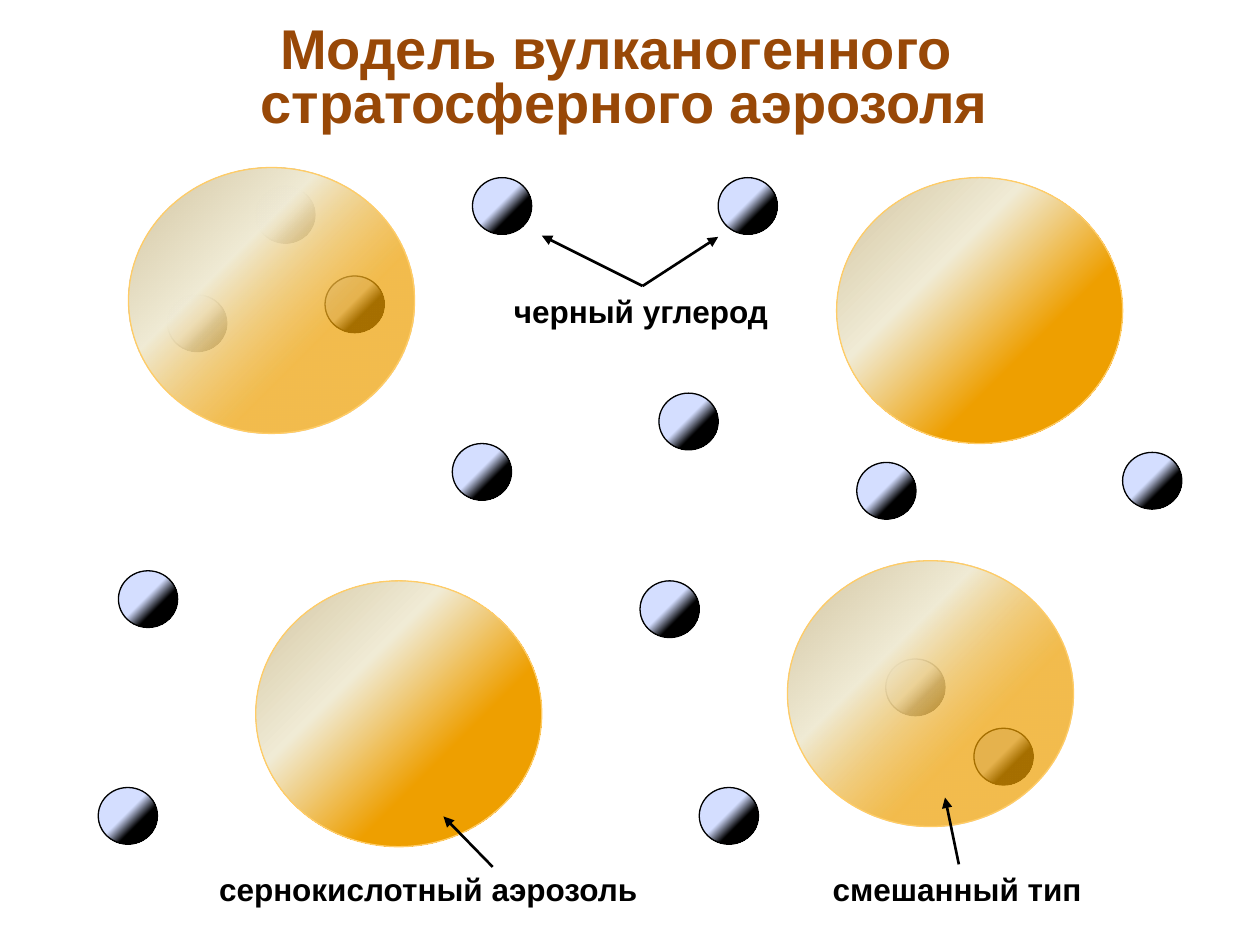
import pptx
import pptx.dml.color
import pptx.enum.shapes
import pptx.enum.text
import pptx.oxml
import pptx.oxml.ns
import pptx.util
from pptx.util import Inches

THEME = {
    "font": "Arial",
    "title_size": 32,
    "label_size": 18,
    "title": "984807",
    "ink": "000000",
    "droplet_line": "FFCC66",
    "thin": 0.75,
    "arrow": 1.5,
    # (position %, colour, opacity %), starting from the lower right corner
    "carbon": [(34, "000000", 100), (53, "D4DEFF", 100), (83, "D4DEFF", 100), (100, "96AB94", 100)],
    "acid": [(34, "EE9F00", 100), (65, "F0EBD5", 100), (100, "D1C39F", 100)],
    "mixed": [(34, "EE9F00", 70), (65, "F0EBD5", 100), (100, "D1C39F", 100)],
}

CARBON_SIZE = (0.47, 0.45)
DROPLET_SIZE = (2.27, 2.11)

# Mixed droplets cover the carbon particles they hold
MIXED_DROPLETS = [
    ((6.25, 4.45), [(7.73, 5.78), (7.03, 5.23)]),
    ((1.02, 1.33), [(2.58, 2.19), (1.33, 2.34), (2.03, 1.48)]),
]
ACID_DROPLETS = [(6.64, 1.41), (2.03, 4.61)]
FREE_CARBON = [
    (8.91, 3.59), (0.78, 6.25), (5.23, 3.12), (3.75, 1.41), (5.7, 1.41), (3.59, 3.52),
    (5.08, 4.61), (6.8, 3.67), (5.55, 6.25), (0.94, 4.53),
]

TITLE = ["Модель вулканогенного ", "стратосферного аэрозоля"]
TITLE_BOX = (1.95, 0.16, 6.01, 0.96)
LABELS = [
    ("черный углерод", (3.98, 2.27, 2.24, 0.4)),
    ("сернокислотный аэрозоль", (1.64, 6.86, 3.56, 0.4)),
    ("смешанный тип", (6.51, 6.86, 2.2, 0.4)),
]
ARROWS = [
    ((5.1, 2.27), (5.7, 1.88)),
    ((5.1, 2.27), (4.3, 1.87)),
    ((3.91, 6.88), (3.52, 6.48)),
    ((7.61, 6.86), (7.5, 6.33)),
]


def color(name):
    return pptx.dml.color.RGBColor.from_string(name)


def xml_element(markup):
    """Parse markup whose root tag holds the slot {ns} for the drawing namespace."""
    return pptx.oxml.parse_xml(markup.replace("{ns}", pptx.oxml.ns.nsdecls("a")))


def corner_gradient(stops):
    """Return a gradient fill that spreads from the lower right corner."""
    stop_markup = "".join(
        f'<a:gs pos="{position * 1000}"><a:srgbClr val="{name}">'
        f'<a:alpha val="{opacity * 1000}"/></a:srgbClr></a:gs>'
        for position, name, opacity in stops
    )
    return xml_element(
        "<a:gradFill {ns}><a:gsLst>" + stop_markup + '</a:gsLst><a:path path="circle">'
        '<a:fillToRect l="100000" t="100000"/></a:path></a:gradFill>'
    )


def add_sphere(slide, position, size, stops, line_color):
    shape = slide.shapes.add_shape(
        pptx.enum.shapes.MSO_SHAPE.OVAL, *map(Inches, position + size))
    shape.shadow.inherit = False
    shape.line.color.rgb = color(line_color)
    shape.line.width = pptx.util.Pt(THEME["thin"])
    shape.fill.background()
    properties = shape.element.spPr
    placeholder_fill = properties.find(pptx.oxml.ns.qn("a:noFill"))
    properties.replace(placeholder_fill, corner_gradient(stops))


def add_carbon(slide, position):
    add_sphere(slide, position, CARBON_SIZE, THEME["carbon"], THEME["ink"])


def add_droplet(slide, position, kind):
    add_sphere(slide, position, DROPLET_SIZE, THEME[kind], THEME["droplet_line"])


def add_text(slide, lines, box, size, text_color, alignment, spacing=1.0):
    frame = slide.shapes.add_textbox(*map(Inches, box)).text_frame
    frame.word_wrap = False
    frame.auto_size = pptx.enum.text.MSO_AUTO_SIZE.SHAPE_TO_FIT_TEXT
    frame.text = "\n".join(lines)
    for paragraph in frame.paragraphs:
        paragraph.alignment = alignment
        paragraph.line_spacing = spacing
        paragraph.font.name = THEME["font"]
        paragraph.font.size = pptx.util.Pt(size)
        paragraph.font.bold = True
        paragraph.font.color.rgb = color(text_color)


def add_arrow(slide, start, end):
    connector = slide.shapes.add_connector(
        pptx.enum.shapes.MSO_CONNECTOR.STRAIGHT, *map(Inches, start + end))
    connector.line.color.rgb = color(THEME["ink"])
    connector.line.width = pptx.util.Pt(THEME["arrow"])
    connector.line._get_or_add_ln().append(xml_element('<a:tailEnd {ns} type="triangle"/>'))
    connector._element.spPr.append(xml_element("<a:effectLst {ns}/>"))


def main():
    presentation = pptx.Presentation()
    presentation.slide_width = Inches(10)
    presentation.slide_height = Inches(7.5)
    slide = presentation.slides.add_slide(presentation.slide_layouts[6])

    for droplet, particles in MIXED_DROPLETS:
        for particle in particles:
            add_carbon(slide, particle)
        add_droplet(slide, droplet, "mixed")
    for droplet in ACID_DROPLETS:
        add_droplet(slide, droplet, "acid")
    for particle in FREE_CARBON:
        add_carbon(slide, particle)

    align = pptx.enum.text.PP_ALIGN
    add_text(slide, TITLE, TITLE_BOX, THEME["title_size"], THEME["title"], align.CENTER, 0.8)
    for label, box in LABELS:
        add_text(slide, [label], box, THEME["label_size"], THEME["ink"], align.LEFT)
    for start, end in ARROWS:
        add_arrow(slide, start, end)

    presentation.save("out.pptx")


if __name__ == "__main__":
    main()
